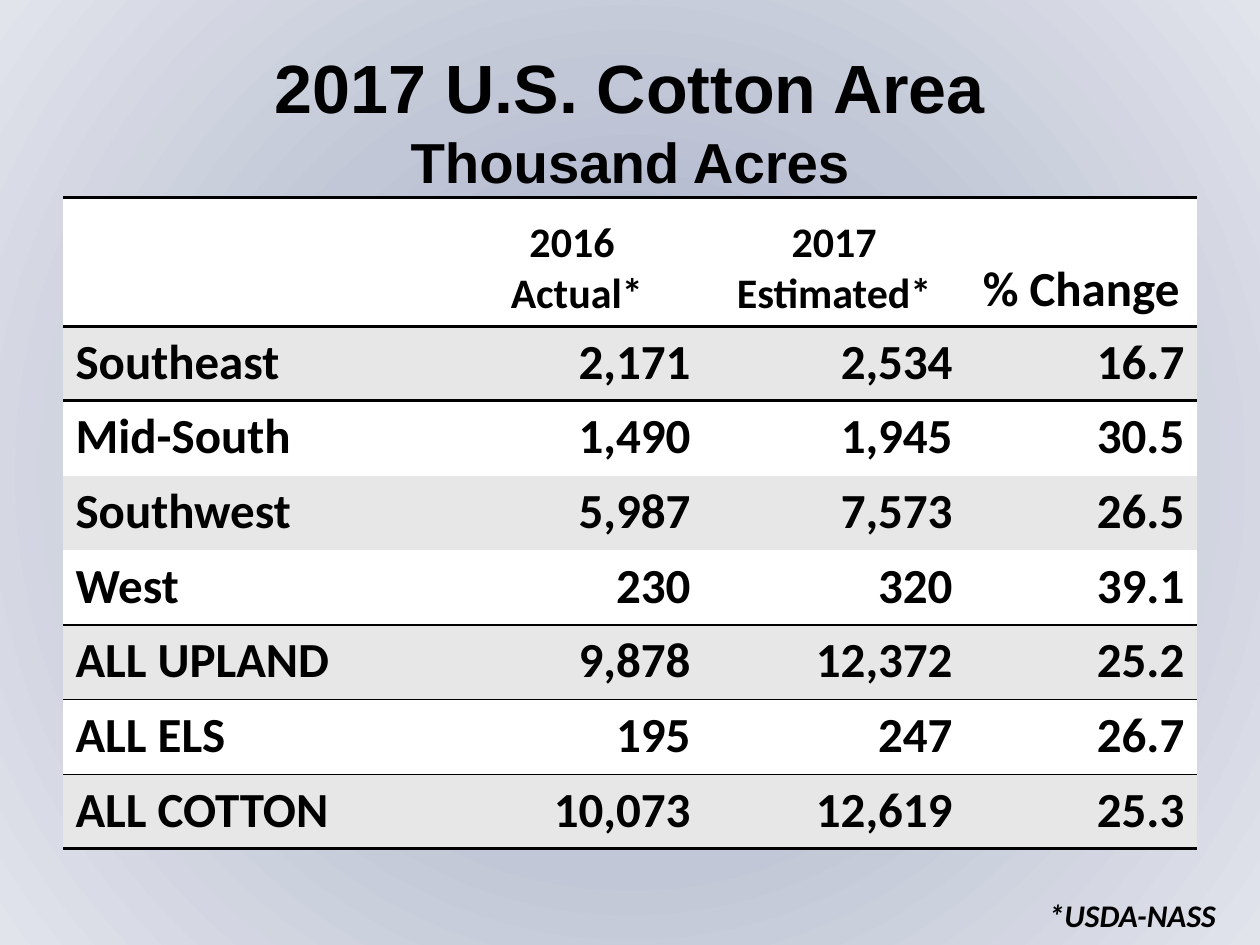
from pptx import Presentation, util as u
from pptx.dml.color import RGBColor
from pptx.enum import text
from pptx.oxml import parse_xml
from pptx.oxml.ns import nsdecls, qn

COLORS = {"ink": "000000", "white": "FFFFFF", "band": "E7E7E7",
          "center": "98A3C1", "middle": "C2C7D7", "edge": "E1E4EB"}
HEADING = [("2017 U.S. Cotton Area", 39), ("Thousand Acres", 32.2)]
HEADER = [("", 24), ("2016\n Actual*", 24), ("2017 Estimated*", 24), ("% Change", 28)]
REGIONS = [
    ("Southeast", "2,171", "2,534", "16.7"),
    ("Mid-South", "1,490", "1,945", "30.5"),
    ("Southwest", "5,987", "7,573", "26.5"),
    ("West", "230", "320", "39.1"),
    ("ALL UPLAND", "9,878", "12,372", "25.2"),
    ("ALL ELS", "195", "247", "26.7"),
    ("ALL COTTON", "10,073", "12,619", "25.3"),
]
SOURCE = "*USDA-NASS"
RULES = {0: 2, 1: 2, 5: 1, 7: 1, 8: 2}
COLUMN_WIDTHS = [3, 2.08, 2.08, 1.84]
HEADER_HEIGHT, TABLE_HEIGHT = 1.02, 5.17
MARGIN, TABLE_TOP = 0.5, 1.57
PLAIN_TABLE = "{2D5ABB26-0587-4C30-8999-92F81FD0307C}"
ALIGN = text.PP_ALIGN


def style(paragraph, size, font, align, italic=None):
    paragraph.alignment = align
    for run in paragraph.runs:
        run.font.size = u.Pt(size)
        run.font.name = font
        run.font.bold = True
        run.font.italic = italic
        run.font.color.rgb = RGBColor.from_string(COLORS["ink"])


def paint_background(slide):
    slide.background.fill.solid()
    properties = slide._element.find(".//" + qn("p:bgPr"))
    stops = "".join(
        f'<a:gs pos="{share * 1000}"><a:srgbClr val="{COLORS[name]}"/></a:gs>'
        for share, name in [(0, "center"), (50, "middle"), (100, "edge")])
    properties.replace(properties[0], parse_xml(
        f'<a:gradFill {nsdecls("a")} rotWithShape="1"><a:gsLst>{stops}</a:gsLst>'
        '<a:path path="circle"><a:fillToRect l="50000" t="50000" r="50000" b="50000"/>'
        '</a:path></a:gradFill>'))


def add_heading(slide):
    heading = slide.shapes.title
    heading.left, heading.top = u.Inches(MARGIN), u.Inches(0.3)
    heading.width, heading.height = u.Inches(9), u.Inches(1.25)
    frame = heading.text_frame
    frame.auto_size = text.MSO_AUTO_SIZE.NONE
    frame.vertical_anchor = text.MSO_ANCHOR.BOTTOM
    frame.margin_bottom = 0
    frame.text = "\n".join(line for line, size in HEADING)
    for paragraph, (line, size) in zip(frame.paragraphs, HEADING):
        paragraph.line_spacing = 1.0
        paragraph.space_before = u.Pt(0)
        style(paragraph, size, "Arial", ALIGN.CENTER)


def rule_cell(cell, row):
    edges = [("lnT", RULES.get(row)), ("lnB", RULES.get(row + 1))]
    lines = [(tag, width) for tag, width in edges if width]
    for position, (tag, width) in enumerate(lines):
        cell._tc.get_or_add_tcPr().insert(position, parse_xml(
            f'<a:{tag} {nsdecls("a")} w="{u.Pt(width)}"><a:solidFill>'
            f'<a:srgbClr val="{COLORS["ink"]}"/></a:solidFill></a:{tag}>'))


def add_acreage(slide):
    rows = [HEADER] + [[(value, 28) for value in region] for region in REGIONS]
    acreage = slide.shapes.add_table(
        len(rows), len(HEADER), u.Inches(MARGIN), u.Inches(TABLE_TOP),
        u.Inches(sum(COLUMN_WIDTHS)), u.Inches(TABLE_HEIGHT)).table
    acreage.first_row = acreage.horz_banding = False
    acreage._tbl.tblPr.find(qn("a:tableStyleId")).text = PLAIN_TABLE
    for column, width in zip(acreage.columns, COLUMN_WIDTHS):
        column.width = u.Inches(width)
    region_height = (TABLE_HEIGHT - HEADER_HEIGHT) / len(REGIONS)
    for r, entries in enumerate(rows):
        acreage.rows[r].height = u.Inches(region_height if r else HEADER_HEIGHT)
        for c, (value, size) in enumerate(entries):
            cell = acreage.cell(r, c)
            cell.fill.solid()
            cell.fill.fore_color.rgb = RGBColor.from_string(COLORS["band" if r % 2 else "white"])
            cell.vertical_anchor = text.MSO_ANCHOR.TOP if r else text.MSO_ANCHOR.BOTTOM
            cell.text_frame.text = value
            align = ALIGN.CENTER if r == 0 else ALIGN.RIGHT if c else ALIGN.LEFT
            for paragraph in cell.text_frame.paragraphs:
                style(paragraph, size, "Calibri", align)
            rule_cell(cell, r)


def add_source(slide):
    source = slide.shapes.add_textbox(
        u.Inches(7.83), u.Inches(7.06), u.Inches(2), u.Inches(0.4))
    frame = source.text_frame
    frame.word_wrap = True
    frame.margin_right = u.Inches(0.18)
    frame.text = SOURCE
    style(frame.paragraphs[0], 18, "Calibri", ALIGN.RIGHT, italic=True)


def main():
    deck = Presentation()
    deck.slide_width, deck.slide_height = u.Inches(10), u.Inches(7.5)
    slide = deck.slides.add_slide(deck.slide_layouts[5])
    paint_background(slide)
    add_heading(slide)
    add_acreage(slide)
    add_source(slide)
    deck.save("out.pptx")


if __name__ == "__main__":
    main()
